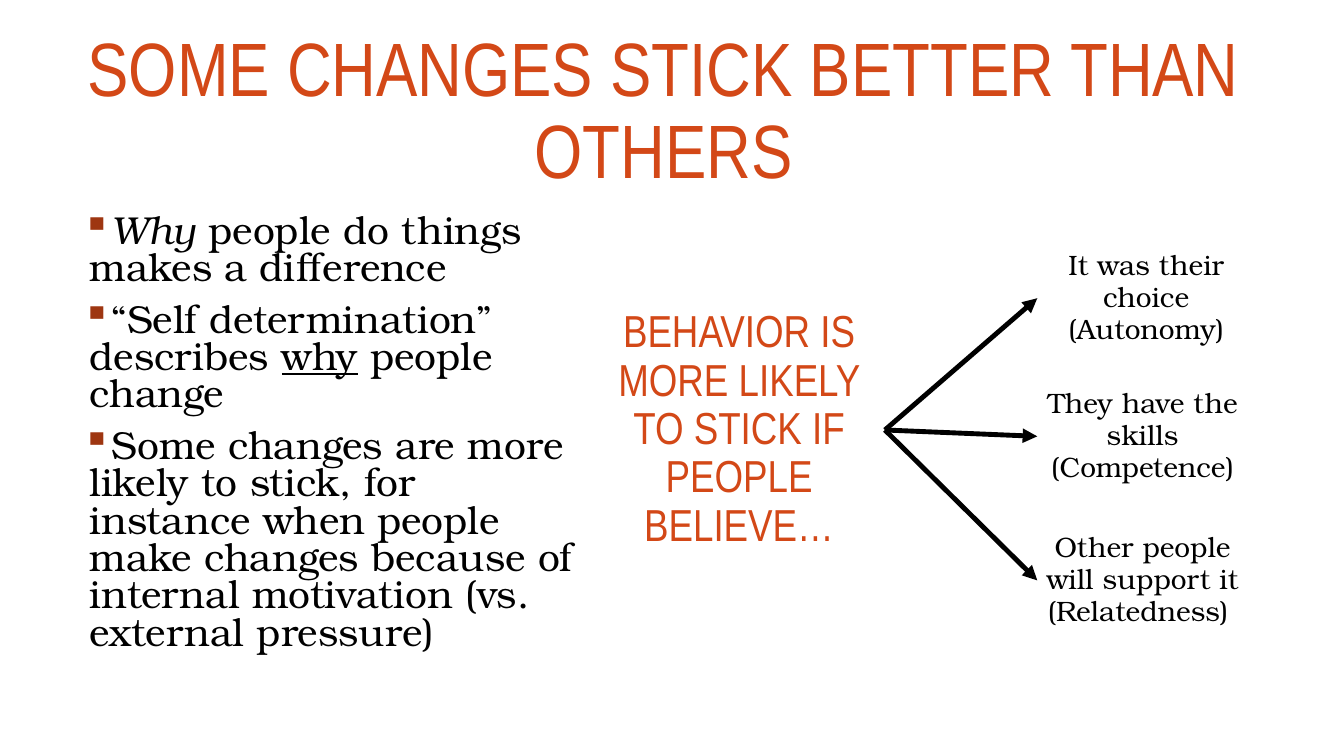
from dataclasses import dataclass

import pptx
import pptx.dml.color
import pptx.enum.shapes
import pptx.enum.text
import pptx.oxml
import pptx.oxml.ns
import pptx.presentation
import pptx.shapes.autoshape
import pptx.slide
import pptx.util
from pptx.util import Cm

HEADING_FONT = "Arial Narrow"
BODY_FONT = "TeX Gyre Bonum"
ORANGE = "D34817"
RUST = "9E3611"
BLACK = "000000"


@dataclass(frozen=True)
class Run:
    text: str
    italic: bool = False
    underline: bool = False


@dataclass(frozen=True)
class Box:
    left: float
    top: float
    width: float
    height: float


@dataclass(frozen=True)
class Style:
    font: str
    size: float
    color: str
    line_spacing: float


@dataclass(frozen=True)
class Belief:
    text: str
    top: float
    indent: float


TITLE_STYLE = Style(HEADING_FONT, 54, ORANGE, 0.9)
PROMPT_STYLE = Style(HEADING_FONT, 32, ORANGE, 0.9)
POINT_STYLE = Style(BODY_FONT, 27.8, BLACK, 0.8)
BELIEF_STYLE = Style(BODY_FONT, 20, BLACK, 0.95)

POINTS = [
    [Run("Why", italic=True), Run(" people do things makes a difference")],
    [Run("“Self determination” describes "), Run("why", underline=True), Run(" people change")],
    [Run("Some changes are more likely to stick, for instance when people make changes "
         "because of internal motivation (vs. external pressure)")],
]

BELIEFS = [
    Belief("It was their choice (Autonomy)", 6.17, 0.36),
    Belief("They have the skills (Competence)", 9.65, 0.18),
    Belief("Other people will support it (Relatedness) ", 13.28, 0.18),
]


def rgb(color: str) -> pptx.dml.color.RGBColor:
    return pptx.dml.color.RGBColor.from_string(color)


def append_xml(parent, tag: str, inner: str = "", attributes: str = "") -> None:
    namespace = pptx.oxml.ns.nsdecls("a")
    parent.append(pptx.oxml.parse_xml(f"<a:{tag} {namespace} {attributes}>{inner}</a:{tag}>"))


def add_box(slide: pptx.slide.Slide, box: Box) -> pptx.shapes.autoshape.Shape:
    shape = slide.shapes.add_textbox(Cm(box.left), Cm(box.top), Cm(box.width), Cm(box.height))
    shape.text_frame.word_wrap = True
    return shape


def set_indent(paragraph, margin: float, first_line: float) -> None:
    properties = paragraph._p.get_or_add_pPr()
    properties.set("marL", str(Cm(margin)))
    properties.set("indent", str(Cm(first_line)))


def fill_paragraph(paragraph, runs: list[Run], style: Style) -> None:
    paragraph.line_spacing = style.line_spacing
    for item in runs:
        run = paragraph.add_run()
        run.text = item.text
        run.font.name = style.font
        run.font.size = pptx.util.Pt(style.size)
        run.font.color.rgb = rgb(style.color)
        run.font.italic = item.italic
        run.font.underline = item.underline


def add_heading(slide: pptx.slide.Slide, text: str, box: Box, style: Style) -> pptx.shapes.autoshape.Shape:
    shape = add_box(slide, box)
    shape.text_frame.vertical_anchor = pptx.enum.text.MSO_ANCHOR.MIDDLE
    paragraph = shape.text_frame.paragraphs[0]
    paragraph.alignment = pptx.enum.text.PP_ALIGN.CENTER
    fill_paragraph(paragraph, [Run(text)], style)
    return shape


def add_points(slide: pptx.slide.Slide, box: Box) -> None:
    frame = add_box(slide, box).text_frame
    for index, runs in enumerate(POINTS):
        paragraph = frame.add_paragraph() if index else frame.paragraphs[0]
        set_indent(paragraph, 0.18, -0.64)
        properties = paragraph._p.get_or_add_pPr()
        append_xml(properties, "buClr", f'<a:srgbClr val="{RUST}"/>')
        append_xml(properties, "buChar", attributes='char="▪"')
        if index:
            paragraph.space_before = pptx.util.Pt(10)
        fill_paragraph(paragraph, runs, POINT_STYLE)


def add_belief(slide: pptx.slide.Slide, belief: Belief) -> pptx.shapes.autoshape.Shape:
    shape = add_box(slide, Box(26.14, belief.top, 5.13, 2.69))
    frame = shape.text_frame
    frame.margin_left = frame.margin_right = 0
    frame.auto_size = pptx.enum.text.MSO_AUTO_SIZE.SHAPE_TO_FIT_TEXT
    paragraph = frame.paragraphs[0]
    set_indent(paragraph, belief.indent, 0)
    append_xml(paragraph._p.get_or_add_pPr(), "tabLst", f'<a:tab pos="{Cm(0.79)}" algn="l"/>')
    paragraph.alignment = pptx.enum.text.PP_ALIGN.CENTER
    fill_paragraph(paragraph, [Run(belief.text)], BELIEF_STYLE)
    return shape


def add_arrow(slide: pptx.slide.Slide, source: pptx.shapes.autoshape.Shape,
              target: pptx.shapes.autoshape.Shape) -> None:
    arrow = slide.shapes.add_connector(pptx.enum.shapes.MSO_CONNECTOR.STRAIGHT, 0, 0, 0, 0)
    arrow.begin_connect(source, 3)
    arrow.end_connect(target, 1)
    arrow.line.color.rgb = rgb(BLACK)
    arrow.line.width = pptx.util.Pt(3.5)
    append_xml(arrow.line._get_or_add_ln(), "tailEnd", attributes='type="triangle"')
    append_xml(arrow._element.spPr, "effectLst")


def main() -> None:
    presentation = pptx.Presentation()
    presentation.slide_width = Cm(33.87)
    presentation.slide_height = Cm(19.05)
    slide = presentation.slides.add_slide(presentation.slide_layouts[6])

    add_points(slide, Box(1.83, 5.28, 13.13, 12.09))
    add_heading(slide, "SOME CHANGES STICK BETTER THAN OTHERS",
                Box(1.91, 0.61, 29.64, 4.47), TITLE_STYLE)
    prompt = add_heading(slide, "BEHAVIOR IS MORE LIKELY TO STICK IF PEOPLE BELIEVE…",
                         Box(14.96, 7.7, 7.34, 6.27), PROMPT_STYLE)
    belief_boxes = [add_belief(slide, belief) for belief in BELIEFS]
    for belief_box in belief_boxes:
        add_arrow(slide, prompt, belief_box)

    presentation.save("out.pptx")


if __name__ == "__main__":
    main()
